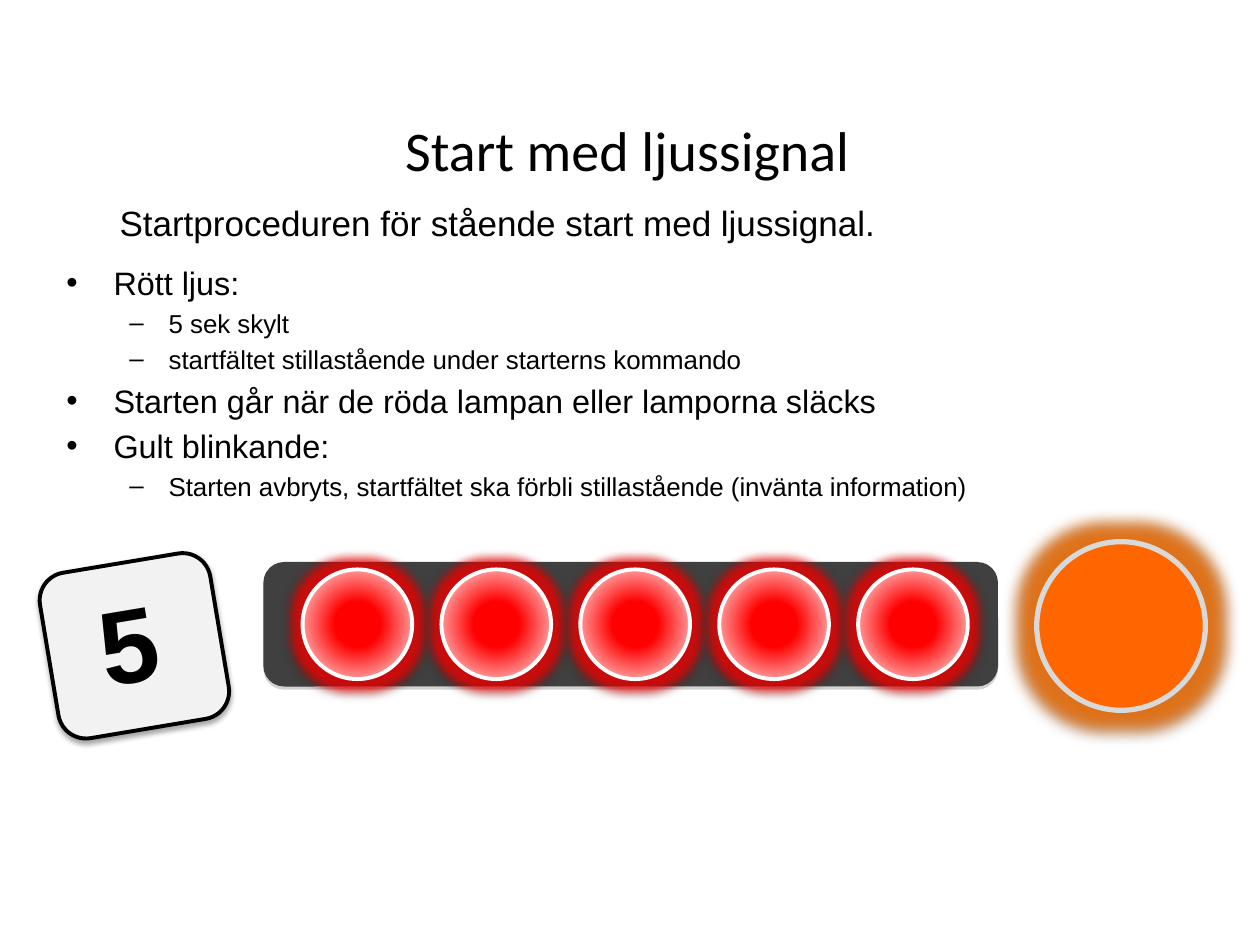
from dataclasses import dataclass
from typing import Optional

from lxml import etree
from pptx import Presentation
from pptx.dml.color import RGBColor
from pptx.enum.shapes import MSO_SHAPE
from pptx.enum.text import MSO_ANCHOR, PP_ALIGN
from pptx.oxml.ns import qn
from pptx.util import Cm, Pt

ELLIPSE = MSO_SHAPE.OVAL
ROUNDED = MSO_SHAPE.ROUNDED_RECTANGLE
CENTER = PP_ALIGN.CENTER
MIDDLE = MSO_ANCHOR.MIDDLE


@dataclass(frozen=True)
class Theme:
    heading_font: str = "Calibri"
    text_font: str = "Arial"
    black: str = "000000"
    white: str = "FFFFFF"
    red: str = "FF0000"
    orange: str = "FF6600"
    orange_glow: str = "E46C0A"
    housing: str = "404040"
    housing_shadow: str = "808080"
    plate: str = "F2F2F2"
    rim: str = "D9D9D9"
    title_size: float = 32
    intro_size: float = 20
    level_sizes: tuple = (18.5, 14.8)
    digit_size: float = 60


THEME = Theme()


@dataclass(frozen=True)
class Box:
    left: float
    top: float
    width: float
    height: float
    rotation: float = 0

    def lengths(self):
        return Cm(self.left), Cm(self.top), Cm(self.width), Cm(self.height)


@dataclass(frozen=True)
class Glow:
    color: str
    radius: float
    opacity: int


@dataclass(frozen=True)
class Figure:
    box: Box
    preset: MSO_SHAPE
    fill: str
    line: Optional[str] = None
    line_width: float = 2.25
    fade: Optional[str] = None
    glow: Optional[Glow] = None
    shadow: str = THEME.black
    shadow_blur: float = 3.1


@dataclass(frozen=True)
class Bullet:
    text: str
    level: int = 0


@dataclass(frozen=True)
class BulletStyle:
    mark: str
    margin: float
    hanging: float


BULLET_STYLES = (BulletStyle("•", 0.95, 0.95), BulletStyle("–", 2.06, 0.79))

RULES = (
    Bullet("Rött ljus:"),
    Bullet("5 sek skylt", 1),
    Bullet("startfältet stillastående under starterns kommando", 1),
    Bullet("Starten går när de röda lampan eller lamporna släcks"),
    Bullet("Gult blinkande:"),
    Bullet("Starten avbryts, startfältet ska förbli stillastående (invänta information)", 1),
)

LAMP_COUNT = 5
LAMP_LEFT, LAMP_TOP, LAMP_SIZE, LAMP_STEP = 6.1, 11.48, 2.21, 2.8
SIGN_TILT = 350.5


def add_color(parent, color: str, opacity: int) -> None:
    srgb = etree.SubElement(parent, qn("a:srgbClr"), val=color)
    etree.SubElement(srgb, qn("a:alpha"), val=str(opacity * 1000))


def add_effects(shape, figure: Figure) -> None:
    shape.shadow.inherit = False
    effects = shape._element.spPr.find(qn("a:effectLst"))
    if figure.glow:
        glow = etree.SubElement(effects, qn("a:glow"), rad=str(Pt(figure.glow.radius)))
        add_color(glow, figure.glow.color, figure.glow.opacity)
    shadow = etree.SubElement(
        effects, qn("a:outerShdw"), blurRad=str(Pt(figure.shadow_blur)),
        dist=str(Pt(1.8)), dir="5400000", rotWithShape="0")
    add_color(shadow, figure.shadow, 35)


def fill_radially(shape, inner: str, outer: str) -> None:
    shape.fill.gradient()
    for stop, color, position in zip(shape.fill.gradient_stops, (inner, outer), (0.29, 1)):
        stop.color.rgb = RGBColor.from_string(color)
        stop.position = position
    gradient = shape._element.spPr.find(qn("a:gradFill"))
    gradient.remove(gradient.find(qn("a:lin")))
    radial = etree.SubElement(gradient, qn("a:path"), path="circle")
    etree.SubElement(radial, qn("a:fillToRect"), l="50000", t="50000", r="50000", b="50000")


def draw_figure(slide, figure: Figure) -> None:
    shape = slide.shapes.add_shape(figure.preset, *figure.box.lengths())
    shape.rotation = figure.box.rotation
    if figure.fade:
        fill_radially(shape, figure.fill, figure.fade)
    else:
        shape.fill.solid()
        shape.fill.fore_color.rgb = RGBColor.from_string(figure.fill)
    if figure.line:
        shape.line.color.rgb = RGBColor.from_string(figure.line)
        shape.line.width = Pt(figure.line_width)
    else:
        shape.line.fill.background()
    add_effects(shape, figure)


def format_font(paragraph, size: float, name: str = THEME.text_font, bold: bool = False) -> None:
    for run in paragraph.runs:
        run.font.name = name
        run.font.size = Pt(size)
        run.font.bold = bold
        run.font.color.rgb = RGBColor.from_string(THEME.black)


def add_text(slide, box: Box, text: str, wrap: bool = True):
    label = slide.shapes.add_textbox(*box.lengths())
    label.rotation = box.rotation
    label.text_frame.word_wrap = wrap
    label.text_frame.text = text
    return label.text_frame


def add_bullets(slide, box: Box, bullets: tuple[Bullet, ...]) -> None:
    frame = add_text(slide, box, "\n".join(bullet.text for bullet in bullets))
    for index, (paragraph, bullet) in enumerate(zip(frame.paragraphs, bullets)):
        style = BULLET_STYLES[bullet.level]
        size = THEME.level_sizes[bullet.level]
        paragraph.level = bullet.level
        paragraph.space_before = Pt(0.2 * size if index else 0)
        properties = paragraph._p.get_or_add_pPr()
        properties.set("marL", str(Cm(style.margin)))
        properties.set("indent", str(-Cm(style.hanging)))
        etree.SubElement(properties, qn("a:buFont"), typeface=THEME.text_font)
        etree.SubElement(properties, qn("a:buChar"), char=style.mark)
        format_font(paragraph, size)


def main() -> None:
    deck = Presentation()
    deck.slide_width, deck.slide_height = Cm(25.4), Cm(19.05)
    slide = deck.slides.add_slide(deck.slide_layouts[6])

    title = add_text(slide, Box(1.22, 2.18, 22.86, 1.65), "Start med ljussignal")
    title.vertical_anchor = MIDDLE
    title.paragraphs[0].alignment = CENTER
    format_font(title.paragraphs[0], THEME.title_size, THEME.heading_font)

    add_bullets(slide, Box(1.09, 5.18, 22.86, 5), RULES)

    intro = add_text(slide, Box(0.89, 3.94, 20.6, 1.07),
                     "Startproceduren för stående start med ljussignal.")
    intro.paragraphs[0]._p.get_or_add_pPr().set("marL", str(Cm(1.27)))
    format_font(intro.paragraphs[0], THEME.intro_size)

    draw_figure(slide, Figure(Box(0.97, 11.33, 3.48, 3.38, SIGN_TILT), ROUNDED,
                              THEME.plate, THEME.black))
    digit = add_text(slide, Box(1.75, 11.53, 1.7, 2.79, SIGN_TILT), "5", wrap=False)
    format_font(digit.paragraphs[0], THEME.digit_size, bold=True)

    draw_figure(slide, Figure(Box(20.9, 10.92, 3.4, 3.4), ELLIPSE, THEME.orange, THEME.rim, 3,
                              glow=Glow(THEME.orange_glow, 18, 90)))
    draw_figure(slide, Figure(Box(5.31, 11.33, 14.81, 2.51), ROUNDED, THEME.housing,
                              shadow=THEME.housing_shadow, shadow_blur=0))
    for index in range(LAMP_COUNT):
        lamp = Box(LAMP_LEFT + index * LAMP_STEP, LAMP_TOP, LAMP_SIZE, LAMP_SIZE)
        draw_figure(slide, Figure(lamp, ELLIPSE, THEME.red, THEME.white, fade=THEME.white,
                                  glow=Glow(THEME.red, 11, 75)))

    deck.save("out.pptx")


if __name__ == "__main__":
    main()
